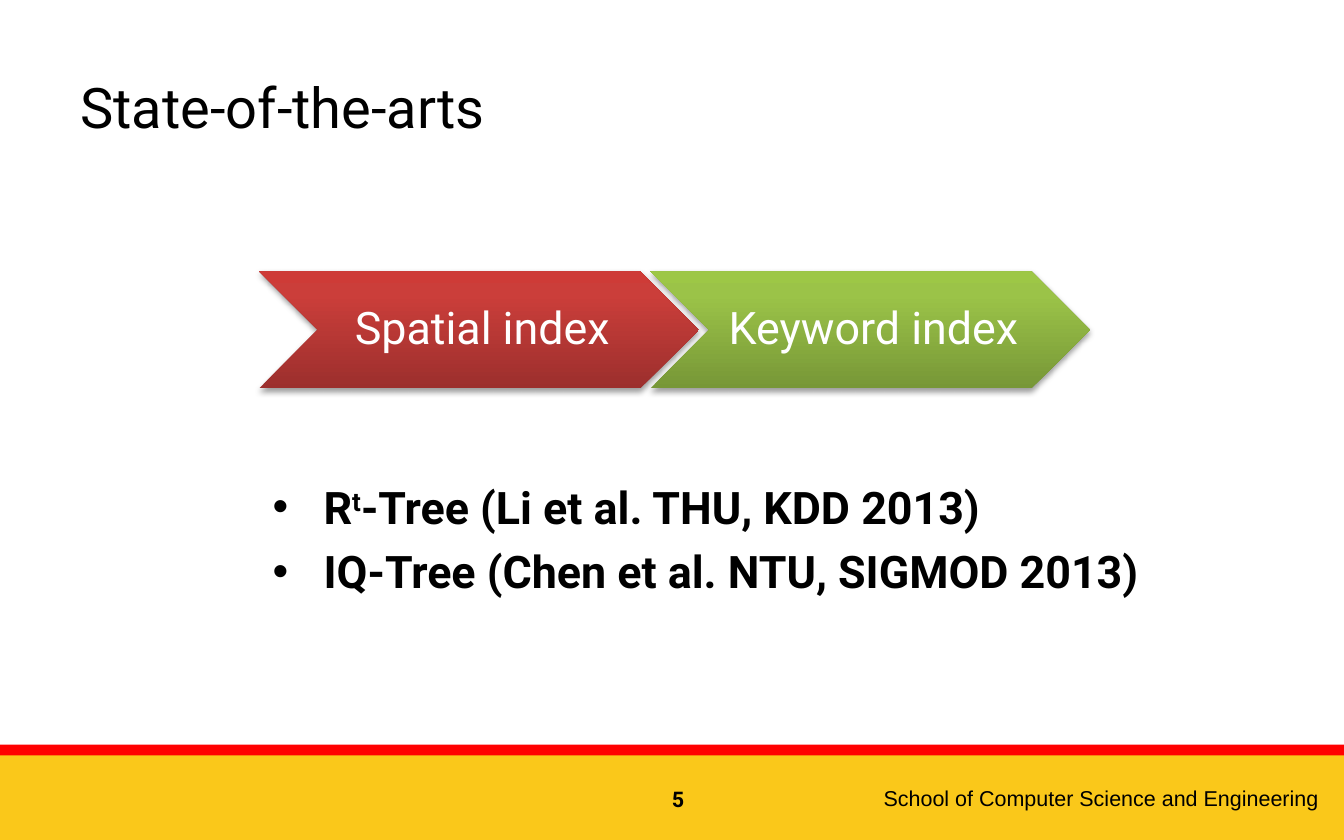
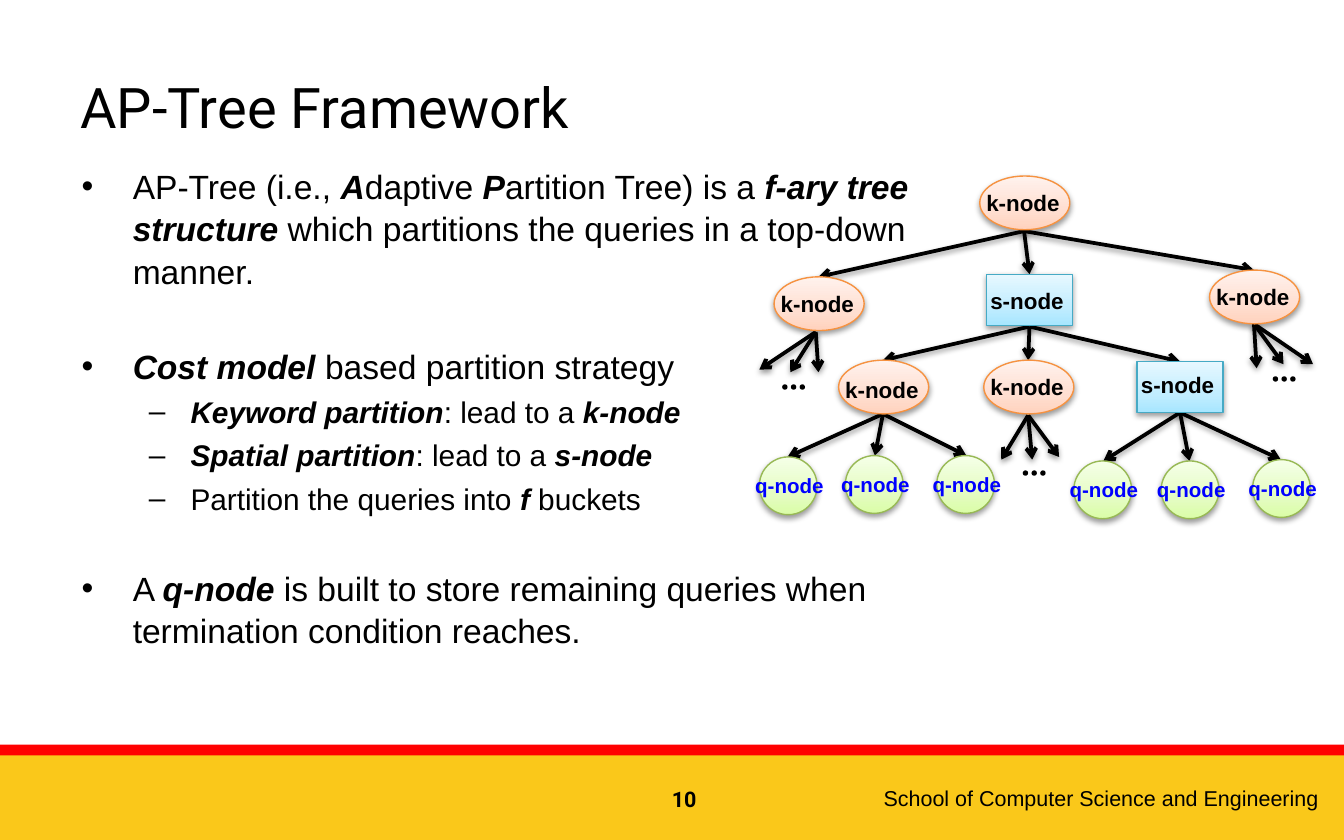
import copy

import lxml.etree
import pptx
import pptx.dml.color
import pptx.enum.shapes
import pptx.enum.text
import pptx.oxml
import pptx.oxml.ns
import pptx.util

COLORS = {
    "text": "000000", "white": "FFFFFF", "band": "FAC81A", "stripe": "FF0000",
    "k_line": "F69240", "s_line": "46AAC5", "q_line": "98B955", "q_text": "0000FF",
}
GRADIENTS = {
    "spatial": [(0, "9C2F2D"), (0.8, "CB3E3A"), (1, "CE3B37")],
    "keyword": [(0, "779737"), (0.8, "9BC348"), (1, "9DC746")],
    "k": [(0, "FFD2BD"), (0.35, "FFDED0"), (1, "FFF2ED")],
    "s": [(0, "A7E6FF"), (0.35, "C1EDFF"), (1, "E7F8FF")],
    "q": [(0, "DAFDA7"), (0.35, "E4FCC2"), (1, "F5FFE7")],
}
SHADOW = (
    '<a:outerShdw xmlns:a="http://schemas.openxmlformats.org/drawingml/2006/main" '
    'blurRad="39370" dist="20320" dir="5400000" rotWithShape="0">'
    '<a:srgbClr val="000000"><a:alpha val="38000"/></a:srgbClr></a:outerShdw>'
)
qn = pptx.oxml.ns.qn
rgb = pptx.dml.color.RGBColor.from_string
Pt = pptx.util.Pt
SHAPE = pptx.enum.shapes.MSO_SHAPE
ALIGN = pptx.enum.text.PP_ALIGN
MIDDLE = pptx.enum.text.MSO_ANCHOR.MIDDLE

presentation = pptx.Presentation()
presentation.slide_width = pptx.util.Inches(10)
presentation.slide_height = pptx.util.Inches(6.25)
CELL = presentation.slide_width // 100
COLUMNS, ROWS = 100, 62.5


def add_shape(slide, kind, box, fill, line=None):
    shape = slide.shapes.add_shape(kind, *[round(cells * CELL) for cells in box])
    shape.shadow.inherit = False
    if fill in GRADIENTS:
        shape.fill.gradient()
        shape.fill.gradient_angle = 90
        stop_list = shape.element.spPr.find(".//" + qn("a:gsLst"))
        stop_list.append(copy.deepcopy(stop_list[0]))
        for stop, (position, color) in zip(shape.fill.gradient_stops, GRADIENTS[fill]):
            stop.position = position
            stop.color.rgb = rgb(color)
        effects = shape.element.spPr.find(qn("a:effectLst"))
        effects.append(pptx.oxml.parse_xml(SHADOW))
    else:
        shape.fill.solid()
        shape.fill.fore_color.rgb = rgb(COLORS[fill])
    if line:
        shape.line.color.rgb = rgb(COLORS[line])
        shape.line.width = Pt(0.75)
    else:
        shape.line.fill.background()
    return shape


def add_text(slide, box, lines, size, font="Arial", color="text", bold=False):
    text_box = slide.shapes.add_textbox(*[round(cells * CELL) for cells in box])
    text_frame = text_box.text_frame
    text_frame.word_wrap = True
    for number, pieces in enumerate(lines):
        paragraph = text_frame.add_paragraph() if number else text_frame.paragraphs[0]
        for piece in pieces:
            run = paragraph.add_run()
            run.text = piece
            run.font.name = font
            run.font.size = Pt(size)
            run.font.bold = bold
            run.font.color.rgb = rgb(COLORS[color])
    return text_frame


slides = []
for title, number in [("State-of-the-arts", "5"), ("AP-Tree Framework", "10")]:
    slide = presentation.slides.add_slide(presentation.slide_layouts[6])
    slides.append(slide)
    add_shape(slide, SHAPE.RECTANGLE, (0, 55.8, COLUMNS, ROWS - 55.8), "band")
    add_shape(slide, SHAPE.RECTANGLE, (0, 55.4, COLUMNS, 0.8), "stripe")
    school = [["School of Computer Science and Engineering"]]
    footer = add_text(slide, (50.8, 57.9, 48.3, 3), school, 11.5)
    footer.paragraphs[0].alignment = ALIGN.RIGHT
    add_text(slide, (49, 58, 5.5, 2.9), [[number]], 11.5, "Roboto", bold=True)
    heading = add_text(slide, (5, 4.3, 90, 7.2), [[title]], 30, "Roboto")
    heading.vertical_anchor = MIDDLE
index_slide, tree_slide = slides

for step, (label, fill) in enumerate([("Spatial index", "spatial"), ("Keyword index", "keyword")]):
    left = 19.3 + 29.1 * step
    add_shape(index_slide, SHAPE.CHEVRON, (left, 20.2, 32.7, 8.7), fill)
    caption = add_text(index_slide, (left + 4.3, 20.2, 24, 8.7), [[label]], 24, "Roboto", "white")
    caption.vertical_anchor = MIDDLE
    caption.margin_right = caption.margin_top = caption.margin_bottom = round(0.4 * CELL)
    caption.paragraphs[0].alignment = ALIGN.CENTER
    caption.paragraphs[0].line_spacing = 0.9

index_lines = [
    ["R", "t", "-Tree (Li et al. THU, KDD 2013)"],
    ["IQ-Tree (Chen et al. NTU, SIGMOD 2013)"],
]
index_body = add_text(index_slide, (19.3, 35.2, 70.1, 8.7), index_lines, 24, "Roboto", bold=True)
index_body.paragraphs[0].runs[1]._r.get_or_add_rPr().set("baseline", "30000")
index_body.paragraphs[1].space_before = Pt(5.6)

tree_lines = [
    ["AP-Tree (i.e., ", "A", "daptive ", "P", "artition Tree) is a ",
     "f-ary tree structure ", "which partitions the queries in a top-down manner."],
    ["", "Cost model ", "based partition strategy"],
    ["", "Keyword partition", ": lead to a ", "k-node"],
    ["", "Spatial partition", ": lead to a ", "s-node"],
    ["Partition the queries into ", "f", " buckets"],
    ["A ", "q-node", " is built to store remaining queries when termination condition reaches."],
]
tree_levels = [0, 0, 1, 1, 1, 0]
tree_gaps = [0, 28.5, 4, 4, 4, 26.5]
tree_body = add_text(tree_slide, (5.1, 11.7, 69.6, 43.2), tree_lines, 18)
for paragraph, level, gap in zip(tree_body.paragraphs, tree_levels, tree_gaps):
    paragraph.level = level
    paragraph.space_before = Pt(gap)
    paragraph.line_spacing = 1 if level else 1.05
    for position, run in enumerate(paragraph.runs):
        run.font.size = Pt(16 if level else 18)
        run.font.bold = run.font.italic = position % 2 == 1
        if not run.text:
            paragraph._p.remove(run._r)

BULLETS = [("•", 3.8, -3.8), ("–", 8.1, -3.1)]
for paragraph in [*index_body.paragraphs, *tree_body.paragraphs]:
    symbol, margin, indent = BULLETS[paragraph.level]
    properties = paragraph._p.get_or_add_pPr()
    properties.set("marL", str(round(margin * CELL)))
    properties.set("indent", str(round(indent * CELL)))
    lxml.etree.SubElement(properties, qn("a:buFont")).set("typeface", "Arial")
    lxml.etree.SubElement(properties, qn("a:buChar")).set("char", symbol)

branches = [
    ((76.2, 17.2), [(60.9, 20.6), (76.6, 20.4), (93.3, 20.1)]),
    ((76.6, 24.3), [(65.7, 26.8), (76.5, 26.8), (87.8, 26.9)]),
    ((65.7, 30.8), [(58.6, 34), (65.1, 33.9), (71.9, 33.9)]),
    ((87.8, 30.7), [(82.1, 34.3), (88.5, 34.3), (95.3, 34.2)]),
    ((93.3, 24.1), [(93.5, 27.4), (95.5, 27.1), (97.7, 27.1)]),
    ((76.5, 30.9), [(74.5, 34.2), (76.8, 34.2), (78.8, 34)]),
    ((60.7, 24.7), [(56.5, 27.5), (58.8, 27.7), (60.9, 27.7)]),
]
for parent, children in branches:
    for child in children:
        ends = [round(cells * CELL) for cells in parent + child]
        connector = tree_slide.shapes.add_connector(
            pptx.enum.shapes.MSO_CONNECTOR.STRAIGHT, *ends)
        connector.line.color.rgb = rgb(COLORS["text"])
        connector.line.width = Pt(2)
        properties = connector.element.spPr
        lxml.etree.SubElement(properties.find(qn("a:ln")), qn("a:tailEnd")).set("type", "arrow")
        effects = lxml.etree.SubElement(properties, qn("a:effectLst"))
        effects.append(pptx.oxml.parse_xml(SHADOW))

node_styles = {
    "k": (SHAPE.OVAL, 6.7, 4, 0.5, 8.1, 12, "text"),
    "s": (SHAPE.RECTANGLE, 6.4, 3.8, 0.7, 8.1, 12, "text"),
    "q": (SHAPE.OVAL, 4.3, 4.3, 1.3, 7.2, 11, "q_text"),
}
nodes = [
    ("k", 72.9, 13.1, 0.5), ("k", 57.6, 20.6, 0.5), ("k", 90, 20.1, 0.5),
    ("s", 73.4, 20.4, 0.5), ("s", 84.6, 26.9, 0.2),
    ("k", 73.2, 26.8, 0.5), ("k", 62.4, 26.8, 0.7),
    ("q", 56.5, 34, 0.7), ("q", 62.9, 33.9, 0.7), ("q", 69.7, 33.9, 0.7),
    ("q", 79.9, 34.3, 0.7), ("q", 86.4, 34.3, 0.7), ("q", 93.2, 34.2, 0.7),
]
for kind, left, top, label_drop in nodes:
    geometry, width, height, overhang, label_width, size, color = node_styles[kind]
    add_shape(tree_slide, geometry, (left, top, width, height), kind, kind + "_line")
    label_box = (left - overhang, top + label_drop, label_width, 3)
    label = add_text(tree_slide, label_box, [[kind + "-node"]], size, color=color, bold=True)
    label.word_wrap = kind != "q"

for left, top in [(58.2, 28.6), (76.1, 35), (94.7, 28)]:
    for dot in range(3):
        add_shape(tree_slide, SHAPE.OVAL, (left + 0.65 * dot, top, 0.4, 0.4), "text")

presentation.save("out.pptx")
